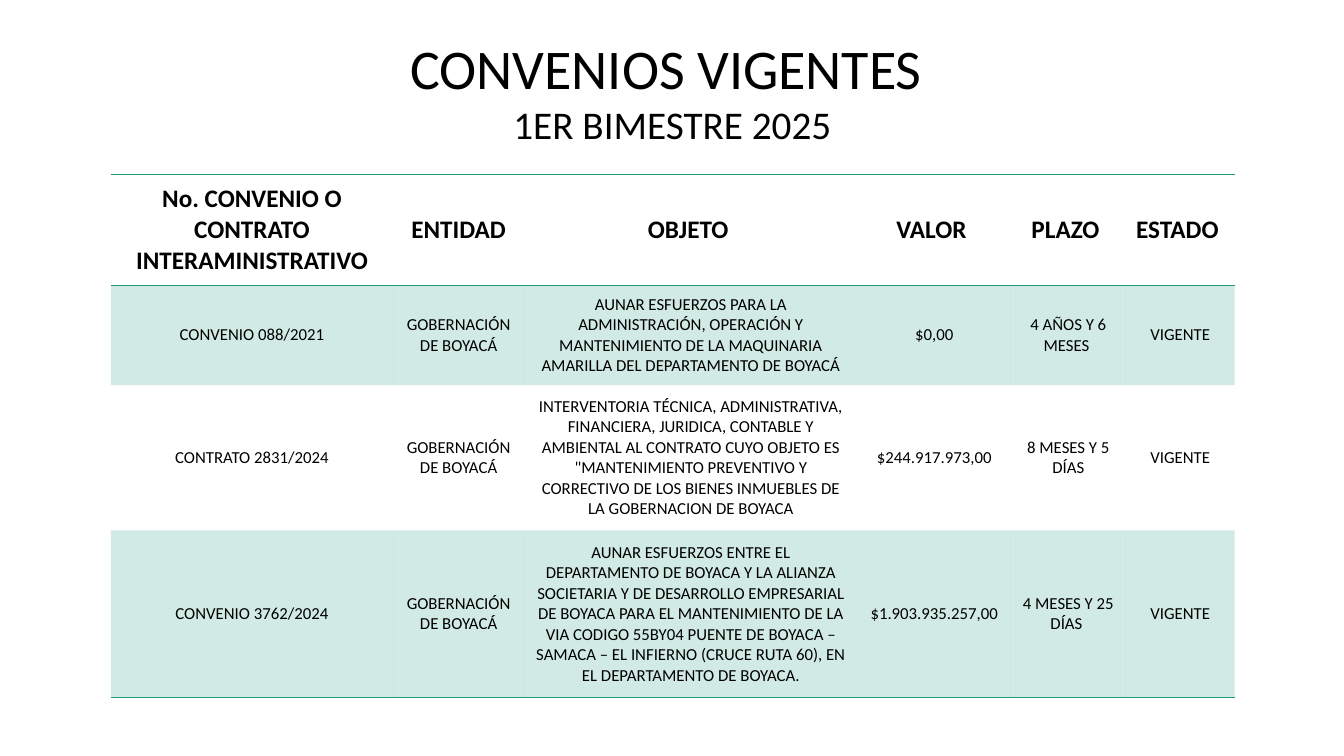
import pptx
import pptx.util
import pptx.dml.color
import pptx.enum.text
import pptx.oxml
import pptx.oxml.ns

Pt = pptx.util.Pt

COLORS = {"text": "000000", "accent": "1D9A78"}
FONT = "Calibri"
TITLE_LINES = [("CONVENIOS VIGENTES ", 40), ("1ER BIMESTRE 2025", 28)]
TITLE_BOX = (283.7, 20.2, 393.1, 90)
TABLE_ORIGIN = (79.2, 124.6)
COLUMN_WIDTHS = [201.6, 93.6, 238.3, 109.4, 82.1, 77.8]
ROW_HEIGHTS = [79.2, 71.3, 103.7, 119.5]
HEADERS = ["No. CONVENIO O CONTRATO INTERAMINISTRATIVO", "ENTIDAD", "OBJETO ",
           "VALOR ", "PLAZO ", "ESTADO "]
ENTITY = "GOBERNACIÓN DE BOYACÁ"
STATUS = "VIGENTE"
AGREEMENTS = [
    ("CONVENIO 088/2021", ENTITY,
     "AUNAR ESFUERZOS PARA LA ADMINISTRACIÓN, OPERACIÓN Y MANTENIMIENTO DE LA "
     "MAQUINARIA AMARILLA DEL DEPARTAMENTO DE BOYACÁ",
     "$0,00", "4 AÑOS Y 6 MESES ", STATUS),
    ("CONTRATO 2831/2024", ENTITY,
     "INTERVENTORIA TÉCNICA, ADMINISTRATIVA, FINANCIERA, JURIDICA, CONTABLE Y "
     "AMBIENTAL AL CONTRATO CUYO OBJETO ES \"MANTENIMIENTO PREVENTIVO Y CORRECTIVO "
     "DE LOS BIENES INMUEBLES DE LA GOBERNACION DE BOYACA",
     "$244.917.973,00", "8 MESES Y 5 DÍAS", STATUS),
    ("CONVENIO 3762/2024", ENTITY,
     "AUNAR ESFUERZOS ENTRE EL DEPARTAMENTO DE BOYACA Y LA ALIANZA SOCIETARIA Y DE "
     "DESARROLLO EMPRESARIAL DE BOYACA PARA EL MANTENIMIENTO DE LA VIA CODIGO 55BY04 "
     "PUENTE DE BOYACA – SAMACA – EL INFIERNO (CRUCE RUTA 60), EN EL DEPARTAMENTO DE "
     "BOYACA.",
     "$1.903.935.257,00", "4 MESES Y 25 DÍAS ", STATUS),
]
NO_STYLE = "{2D5ABB26-0587-4C30-8999-92F81FD0307C}"
BORDER_XML = ('<a:{tag} %s w="12700"><a:solidFill><a:srgbClr val="{color}"/>'
              '</a:solidFill></a:{tag}>' % pptx.oxml.ns.nsdecls("a"))


def format_paragraph(para, size, bold=False):
    para.alignment = pptx.enum.text.PP_ALIGN.CENTER
    para.font.name = FONT
    para.font.size = Pt(size)
    para.font.bold = bold
    para.font.color.rgb = pptx.dml.color.RGBColor.from_string(COLORS["text"])


def tint_cell(cell):
    cell.fill.solid()
    cell.fill.fore_color.rgb = pptx.dml.color.RGBColor.from_string(COLORS["accent"])
    color = cell._tc.tcPr.find(".//" + pptx.oxml.ns.qn("a:srgbClr"))
    color.append(pptx.oxml.parse_xml(
        '<a:alpha %s val="20000"/>' % pptx.oxml.ns.nsdecls("a")))


def add_borders(cell, tags):
    for position, tag in enumerate(tags):
        line = BORDER_XML.format(tag=tag, color=COLORS["accent"])
        cell._tc.tcPr.insert(position, pptx.oxml.parse_xml(line))


def add_title(slide):
    box = slide.shapes.title
    box.left, box.top, box.width, box.height = map(Pt, TITLE_BOX)
    frame = box.text_frame
    frame.text = "\n".join(text for text, size in TITLE_LINES)
    frame.word_wrap = False
    frame.auto_size = pptx.enum.text.MSO_AUTO_SIZE.SHAPE_TO_FIT_TEXT
    frame.vertical_anchor = pptx.enum.text.MSO_ANCHOR.TOP
    for para, (text, size) in zip(frame.paragraphs, TITLE_LINES):
        format_paragraph(para, size)


def add_agreements(slide):
    rows = [HEADERS] + AGREEMENTS
    left, top = TABLE_ORIGIN
    table = slide.shapes.add_table(
        len(rows), len(HEADERS), Pt(left), Pt(top),
        Pt(sum(COLUMN_WIDTHS)), Pt(sum(ROW_HEIGHTS))).table
    table._tbl.tblPr.find(pptx.oxml.ns.qn("a:tableStyleId")).text = NO_STYLE
    for column, width in zip(table.columns, COLUMN_WIDTHS):
        column.width = Pt(width)
    for row, height in zip(table.rows, ROW_HEIGHTS):
        row.height = Pt(height)
    borders = {0: ["lnT", "lnB"], len(rows) - 1: ["lnB"]}
    for row_index, texts in enumerate(rows):
        header = row_index == 0
        for column_index, text in enumerate(texts):
            cell = table.cell(row_index, column_index)
            cell.text = text
            cell.vertical_anchor = pptx.enum.text.MSO_ANCHOR.MIDDLE
            format_paragraph(cell.text_frame.paragraphs[0], 18 if header else 12, header)
            if row_index % 2:
                tint_cell(cell)
            else:
                cell.fill.background()
            add_borders(cell, borders.get(row_index, []))


def main():
    deck = pptx.Presentation()
    deck.slide_width, deck.slide_height = Pt(960), Pt(540)
    slide = deck.slides.add_slide(deck.slide_layouts.get_by_name("Title Only"))
    add_title(slide)
    add_agreements(slide)
    deck.save("out.pptx")


if __name__ == "__main__":
    main()
